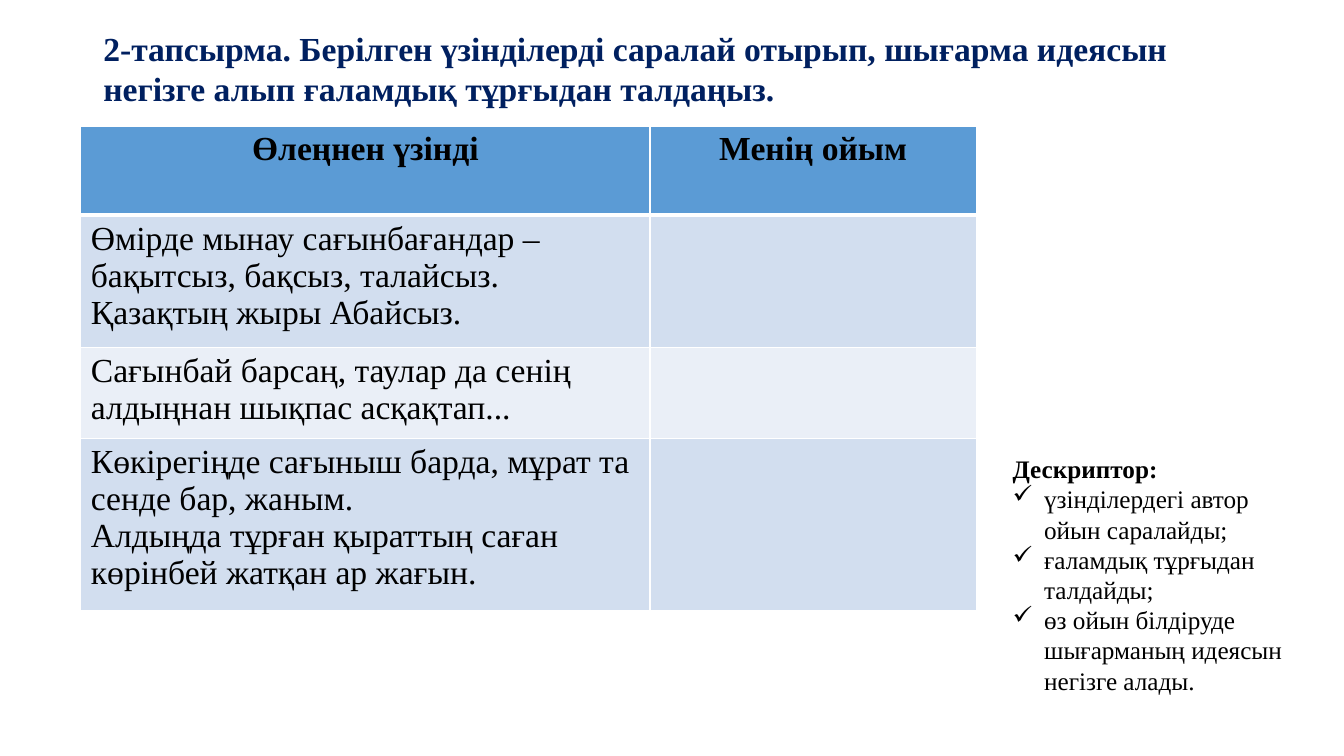
from pptx import Presentation
from pptx.dml.color import RGBColor
from pptx.enum.text import MSO_AUTO_SIZE, PP_ALIGN
from pptx.oxml.ns import qn
from pptx.util import Pt
from lxml.etree import SubElement

PX = 9525  # EMU in one px, 96 px to the inch
FONT = "Times New Roman"
NAVY = RGBColor(0x00, 0x20, 0x60)
BLACK = RGBColor(0x00, 0x00, 0x00)
HEADER_BLUE = RGBColor(0x5B, 0x9B, 0xD5)
BAND_DARK = RGBColor(0xD2, 0xDE, 0xEF)
BAND_LIGHT = RGBColor(0xEA, 0xEF, 0xF7)
WHITE = RGBColor(0xFF, 0xFF, 0xFF)


def style(paragraph, size, color=BLACK, bold=False):
    font = paragraph.font
    font.name, font.size, font.bold = FONT, Pt(size), bold
    font.color.rgb = color


def add_text(left, top, width, height):
    box = slide.shapes.add_textbox(left * PX, top * PX, width * PX, height * PX)
    box.text_frame.word_wrap = True
    box.text_frame.auto_size = MSO_AUTO_SIZE.SHAPE_TO_FIT_TEXT
    return box.text_frame


prs = Presentation()
prs.slide_width, prs.slide_height = 1280 * PX, 720 * PX
slide = prs.slides.add_slide(prs.slide_layouts[6])

# Task heading
heading = add_text(89, 22, 1100, 87).paragraphs[0]
heading.text = ("2-тапсырма. Берілген үзінділерді саралай отырып, шығарма идеясын "
                "негізге алып ғаламдық тұрғыдан талдаңыз.")
style(heading, 24, NAVY, True)

# Descriptor with ticked criteria
descriptor = add_text(955, 427, 296, 272)
descriptor.text = "Дескриптор:"
style(descriptor.paragraphs[0], 18, bold=True)
for criterion in ("үзінділердегі автор ойын саралайды;",
                  "ғаламдық тұрғыдан талдайды;",
                  "өз ойын білдіруде шығарманың идеясын негізге алады."):
    item = descriptor.add_paragraph()
    item.text = criterion
    props = item._p.get_or_add_pPr()
    props.set("marL", str(30 * PX))
    props.set("indent", str(-30 * PX))
    SubElement(props, qn("a:buChar"), char="✓")
    style(item, 18)

# Table of excerpts
rows = [
    ("Өлеңнен үзінді", "Менің ойым"),
    ("Өмірде мынау сағынбағандар – бақытсыз, бақсыз, талайсыз.\n"
     "Қазақтың жыры Абайсыз.", ""),
    ("Сағынбай барсаң, таулар да сенің алдыңнан шықпас асқақтап...", ""),
    ("Көкірегіңде сағыныш барда, мұрат та сенде бар, жаным.\n"
     "Алдыңда тұрған қыраттың саған көрінбей жатқан ар жағын.", ""),
]
column_widths = (542, 311)
row_heights = (85, 126, 86, 164)
excerpts = slide.shapes.add_table(
    len(rows), len(column_widths), 77 * PX, 120 * PX,
    sum(column_widths) * PX, sum(row_heights) * PX).table
for column, width in zip(excerpts.columns, column_widths):
    column.width = width * PX

for r, (texts, height) in enumerate(zip(rows, row_heights)):
    excerpts.rows[r].height = height * PX
    is_header = r == 0
    fill = HEADER_BLUE if is_header else (BAND_LIGHT, BAND_DARK)[r % 2]
    for c, text in enumerate(texts):
        cell = excerpts.cell(r, c)
        cell.text = text
        for paragraph in cell.text_frame.paragraphs:
            style(paragraph, 24, bold=is_header)
            if is_header:
                paragraph.alignment = PP_ALIGN.CENTER

        # White borders, thick between the header and the body
        cell_props = cell._tc.get_or_add_tcPr()
        for side in ("L", "R", "T", "B"):
            thick = (r, side) in ((0, "B"), (1, "T"))
            border = SubElement(cell_props, qn(f"a:ln{side}"), w=str(Pt(3 if thick else 1)))
            SubElement(SubElement(border, qn("a:solidFill")), qn("a:srgbClr"), val=str(WHITE))
        cell.fill.solid()
        cell.fill.fore_color.rgb = fill

prs.save("out.pptx")
